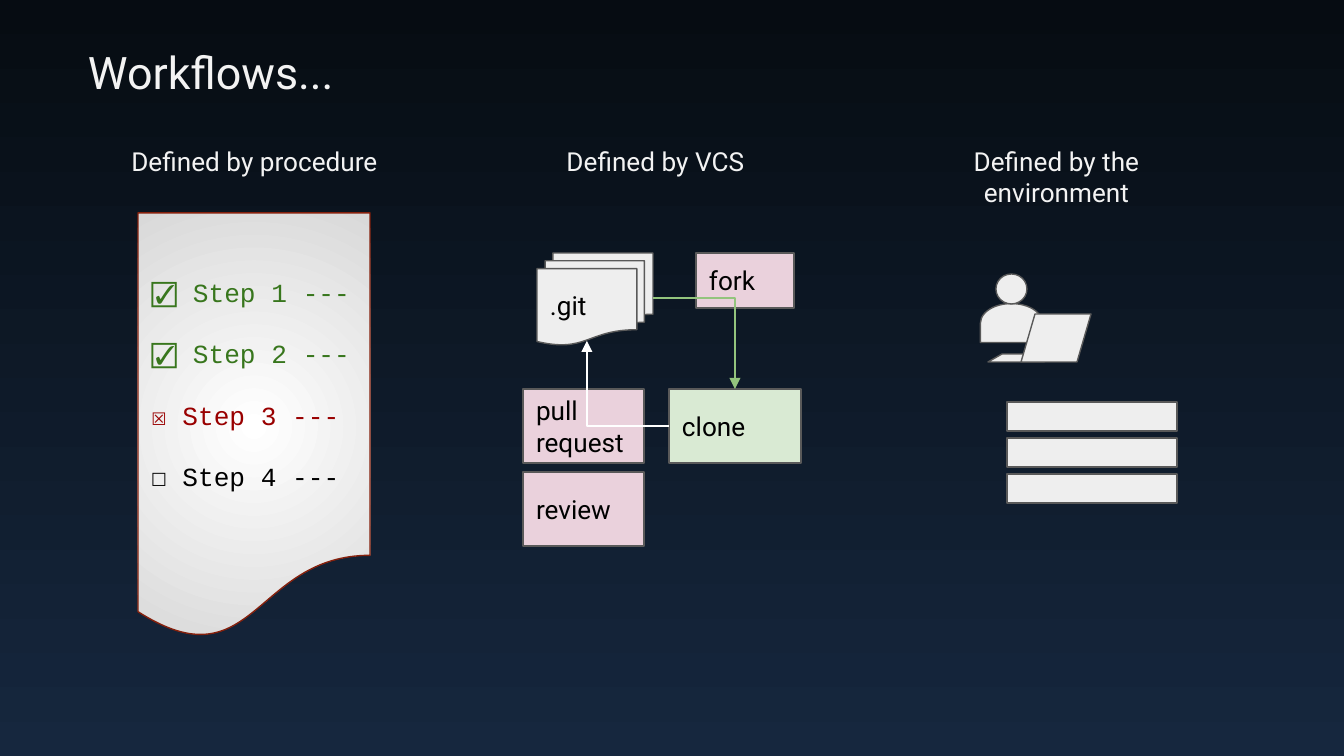
from lxml import etree
from pptx import Presentation
from pptx.dml.color import RGBColor
from pptx.enum.shapes import MSO_CONNECTOR as Link, MSO_SHAPE as Kind
from pptx.enum.text import MSO_ANCHOR as Anchor, MSO_AUTO_SIZE as AutoSize, PP_ALIGN as Align
from pptx.oxml.ns import qn
from pptx.util import Emu, Pt

EMU_PER_PX = 914400 / 134.4
INSET = 13
LIGHT, GRAY, PINK, GREEN = "F3F3F3", "EEEEEE", "EAD1DC", "D9EAD3"
OUTLINE, BLACK, WHITE = "595959", "000000", "FFFFFF"


def px(length):
    return Emu(round(length * EMU_PER_PX))


def box(*lengths):
    return [px(length) for length in lengths]


def color(code):
    return RGBColor.from_string(code)


def set_gradient(fill, start, end):
    fill.gradient()
    for stop, code in zip(fill.gradient_stops, (start, end)):
        stop.color.rgb = color(code)


def make_radial(shape):
    gradient = shape.fill._xPr.find(qn("a:gradFill"))
    gradient.remove(gradient.find(qn("a:lin")))
    circle = etree.SubElement(gradient, qn("a:path"), {"path": "circle"})
    center = dict.fromkeys("ltrb", "50000")
    etree.SubElement(circle, qn("a:fillToRect"), center)


def write(shape, lines, size=14, font="Roboto", align=Align.LEFT, anchor=Anchor.MIDDLE, gap=0):
    frame = shape.text_frame
    frame.word_wrap = True
    frame.auto_size = AutoSize.NONE
    frame.vertical_anchor = anchor
    frame.margin_left = frame.margin_right = px(INSET)
    frame.margin_top = frame.margin_bottom = px(INSET)
    for number, (words, code) in enumerate(lines):
        paragraph = frame.paragraphs[0] if number == 0 else frame.add_paragraph()
        paragraph.text = words
        paragraph.alignment = align
        paragraph.space_before = Pt(gap if number else 0)
        paragraph.font.size = Pt(size)
        paragraph.font.name = font
        paragraph.font.color.rgb = color(code)


def add_shape(slide, kind, place, fill=GRAY, outline=OUTLINE, words=()):
    shape = slide.shapes.add_shape(kind, *box(*place))
    shape.shadow.inherit = False
    shape.fill.solid()
    shape.fill.fore_color.rgb = color(fill)
    shape.line.color.rgb = color(outline)
    shape.line.width = Pt(0.75)
    if words:
        write(shape, [(word, BLACK) for word in words])
    return shape


def add_bent_arrow(slide, start, end, code):
    arrow = slide.shapes.add_connector(Link.ELBOW, *box(*start, *end))
    arrow.line.color.rgb = color(code)
    arrow.line.width = Pt(0.75)
    properties = arrow._element.spPr
    properties.find(qn("a:prstGeom")).set("prst", "bentConnector2")
    etree.SubElement(properties.find(qn("a:ln")), qn("a:tailEnd"), {"type": "triangle"})
    etree.SubElement(properties, qn("a:effectLst"))


def add_heading(slide, left, words):
    heading = slide.shapes.add_textbox(*box(left, 132, 289, 67))
    write(heading, [(words, LIGHT)], align=Align.CENTER, anchor=Anchor.TOP)


def add_title(slide, words):
    title = slide.shapes.title
    title.left, title.top, title.width, title.height = box(75, 32, 289, 67)
    write(title, [(words, LIGHT)], size=24, anchor=Anchor.TOP)


def add_checklist(slide):
    sheet = add_shape(slide, Kind.FLOWCHART_DOCUMENT, (138, 213, 232, 427), outline="85200C")
    set_gradient(sheet.fill, WHITE, "D9D9D9")
    make_radial(sheet)
    steps = [
        ("☑︎ Step 1 ---", "38761D"),
        ("☑︎ Step 2 ---", "38761D"),
        ("☒ Step 3 ---", "990000"),
        ("☐ Step 4 ---", BLACK),
    ]
    write(sheet, steps, font="Courier New", gap=16)


def add_version_control(slide):
    add_shape(slide, Kind.RECTANGLE, (523, 389, 121, 74), PINK, words=("pull", "request"))
    add_shape(slide, Kind.RECTANGLE, (523, 472, 121, 74), PINK, words=("review",))
    add_shape(slide, Kind.RECTANGLE, (696, 253, 98, 55), PINK, words=("fork",))
    add_shape(slide, Kind.FLOWCHART_MULTIDOCUMENT, (537, 253, 116, 92), words=(".git",))
    add_shape(slide, Kind.FLOWCHART_PROCESS, (669, 389, 132, 74), GREEN, words=("clone",))
    add_bent_arrow(slide, (653, 298), (735, 389), "93C47D")
    add_bent_arrow(slide, (669, 426), (587, 341), WHITE)


def add_environment(slide):
    add_shape(slide, Kind.FLOWCHART_DATA, (988, 354, 70, 8))
    torso = add_shape(slide, Kind.FLOWCHART_DELAY, (992, 292, 39, 62))
    torso.rotation = 270
    add_shape(slide, Kind.FLOWCHART_CONNECTOR, (996, 274, 31, 30))
    add_shape(slide, Kind.FLOWCHART_DATA, (1021, 314, 70, 48))
    for layer in range(3):
        add_shape(slide, Kind.FLOWCHART_PROCESS, (1007, 402 + 36 * layer, 170, 29))


def main():
    deck = Presentation()
    deck.slide_width, deck.slide_height = box(1344, 756)
    slide = deck.slides.add_slide(deck.slide_layouts[5])
    backdrop = slide.background.fill
    set_gradient(backdrop, "16273E", "060C12")
    backdrop.gradient_angle = 90
    add_title(slide, "Workflows...")
    add_checklist(slide)
    add_version_control(slide)
    add_environment(slide)
    topics = ("procedure", "VCS", "the environment")
    for column, topic in enumerate(topics):
        add_heading(slide, 110 + 401 * column, f"Defined by {topic}")
    deck.save("out.pptx")


if __name__ == "__main__":
    main()
